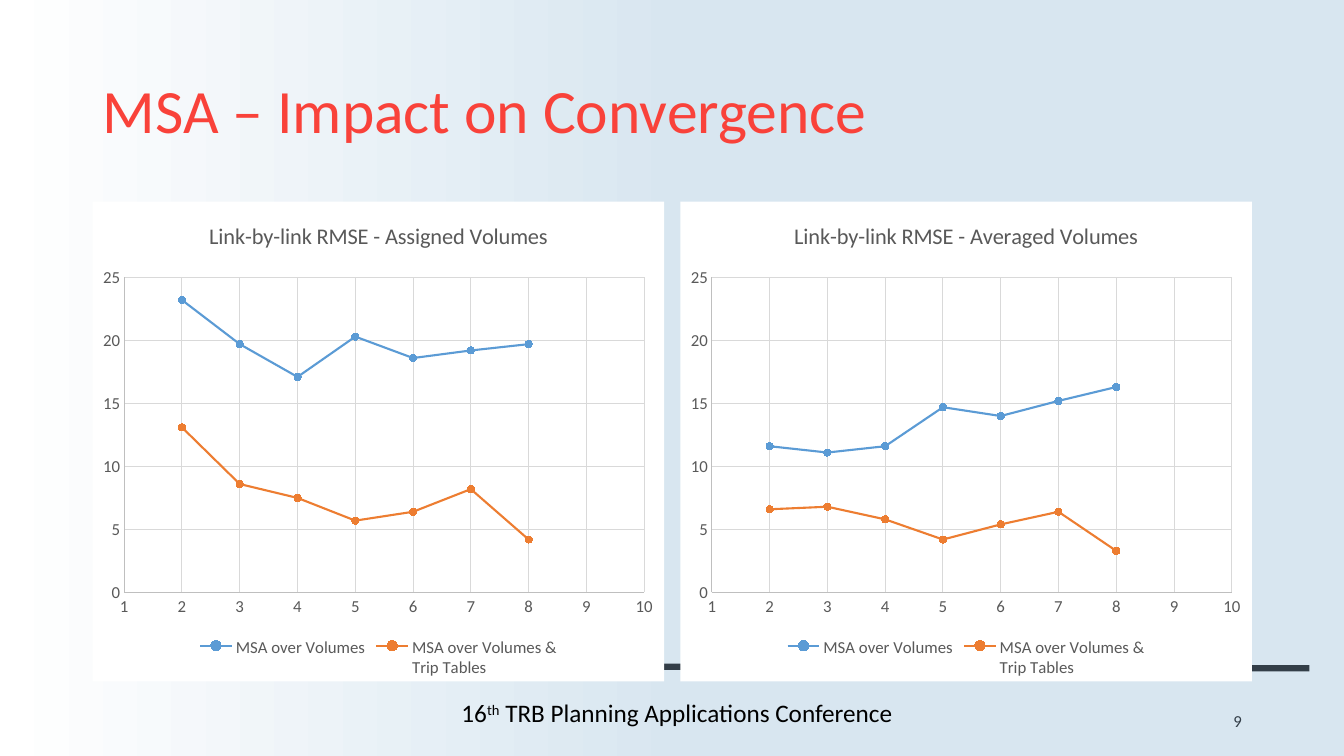
from copy import deepcopy
from dataclasses import dataclass

from lxml.etree import SubElement
from pptx import Presentation
from pptx.chart.data import XyChartData
from pptx.dml.color import RGBColor
from pptx.enum.chart import XL_CHART_TYPE, XL_LEGEND_POSITION, XL_MARKER_STYLE, XL_TICK_MARK
from pptx.enum.shapes import MSO_CONNECTOR
from pptx.enum.text import MSO_ANCHOR, MSO_AUTO_SIZE, PP_ALIGN
from pptx.oxml import parse_xml
from pptx.oxml.ns import nsdecls, qn
from pptx.util import Pt


@dataclass(frozen=True)
class Theme:
    font: str = "Calibri"
    title: str = "F9423A"
    dark: str = "333E48"
    black: str = "000000"
    white: str = "FFFFFF"
    sky: str = "D8E6F0"
    chart_text: str = "595959"
    axis: str = "BFBFBF"
    grid: str = "D9D9D9"
    series: tuple = ("5B9BD5", "ED7D31")
    title_size: int = 44
    footer_size: int = 18
    chart_title_size: int = 16
    small_size: int = 12


THEME = Theme()
ITERATIONS = range(2, 9)
SERIES_NAMES = ("MSA over Volumes", "MSA over Volumes &\nTrip Tables")
CHARTS = (
    ("Link-by-link RMSE - Assigned Volumes",
     ((23.2, 19.7, 17.1, 20.3, 18.6, 19.2, 19.7),
      (13.1, 8.6, 7.5, 5.7, 6.4, 8.2, 4.2))),
    ("Link-by-link RMSE - Averaged Volumes",
     ((11.6, 11.1, 11.6, 14.7, 14, 15.2, 16.3),
      (6.6, 6.8, 5.8, 4.2, 5.4, 6.4, 3.3))),
)
CHART_LEFT, CHART_TOP, CHART_WIDTH, CHART_HEIGHT = 66.24, 144, 408.24, 342.72
CHART_STEP = 419.76
PLOT_AREA = {"x": 0.055, "y": 0.158, "w": 0.91, "h": 0.657}


def set_values(target, values):
    for name, value in values.items():
        setattr(target, name, value)


def format_font(font, size, color):
    set_values(font, {"name": THEME.font, "size": Pt(size), "bold": False})
    font.color.rgb = RGBColor.from_string(color)


def format_line(line, color, width):
    line.color.rgb = RGBColor.from_string(color)
    line.width = Pt(width)


def set_background(slide):
    fill = slide.background.fill
    fill.gradient()
    fill.gradient_angle = 0
    last_stop = slide.element.xpath(".//a:gsLst/a:gs")[-1]
    last_stop.addnext(deepcopy(last_stop))
    stops = ((0, THEME.white), (0.51, THEME.sky), (1, THEME.sky))
    for stop, (position, color) in zip(fill.gradient_stops, stops):
        stop.position = position
        stop.color.rgb = RGBColor.from_string(color)


def add_rule(slide):
    rule = slide.shapes.add_connector(
        MSO_CONNECTOR.STRAIGHT, Pt(96.5), Pt(475.2), Pt(935.3), Pt(477.4))
    format_line(rule.line, THEME.dark, 4.5)
    SubElement(rule.element.spPr, qn("a:effectLst"))


def format_title(title, text):
    set_values(title, {"left": Pt(66.24), "top": Pt(28.8),
                       "width": Pt(828), "height": Pt(104.4)})
    frame = title.text_frame
    frame.text = text
    set_values(frame, {"vertical_anchor": MSO_ANCHOR.MIDDLE, "auto_size": MSO_AUTO_SIZE.NONE})
    paragraph = frame.paragraphs[0]
    set_values(paragraph, {"alignment": PP_ALIGN.LEFT, "line_spacing": 0.9})
    format_font(paragraph.runs[0].font, THEME.title_size, THEME.title)


def add_text(slide, box, runs, size, color, frame_values, alignment):
    """Add one paragraph of (text, baseline shift) runs."""
    shape = slide.shapes.add_textbox(*(Pt(length) for length in box))
    set_values(shape.text_frame, frame_values)
    paragraph = shape.text_frame.paragraphs[0]
    paragraph.alignment = alignment
    for text, baseline in runs:
        run = paragraph.add_run()
        run.text = text
        format_font(run.font, size, color)
        if baseline:
            run.font._rPr.set("baseline", str(baseline))


def format_axis(axis, minimum, maximum, step):
    set_values(axis, {
        "minimum_scale": minimum, "maximum_scale": maximum, "major_unit": step,
        "major_tick_mark": XL_TICK_MARK.NONE, "minor_tick_mark": XL_TICK_MARK.NONE,
        "has_major_gridlines": True,
    })
    format_font(axis.tick_labels.font, THEME.small_size, THEME.chart_text)
    format_line(axis.format.line, THEME.axis, 0.75)
    format_line(axis.major_gridlines.format.line, THEME.grid, 0.75)


def format_series(series, color):
    series.smooth = False
    format_line(series.format.line, color, 1.5)
    set_values(series.marker, {"style": XL_MARKER_STYLE.CIRCLE, "size": 5})
    marker_format = series.marker.format
    marker_format.fill.solid()
    marker_format.fill.fore_color.rgb = RGBColor.from_string(color)
    format_line(marker_format.line, color, 0.75)


def fill_chart_area(chart):
    chart.element.xpath("c:chart")[0].addnext(parse_xml(
        f'<c:spPr {nsdecls("c", "a")}><a:solidFill><a:srgbClr val="{THEME.white}"/>'
        "</a:solidFill><a:ln><a:noFill/></a:ln></c:spPr>"))


def place_plot_area(chart):
    plot_area = chart.element.xpath("c:chart/c:plotArea")[0]
    for old_layout in plot_area.xpath("c:layout"):
        plot_area.remove(old_layout)
    modes = '<c:layoutTarget val="inner"/><c:xMode val="edge"/><c:yMode val="edge"/>'
    sizes = "".join(f'<c:{name} val="{value}"/>' for name, value in PLOT_AREA.items())
    plot_area.insert(0, parse_xml(
        f'<c:layout {nsdecls("c")}><c:manualLayout>{modes}{sizes}</c:manualLayout></c:layout>'))


def add_rmse_chart(slide, left, title, value_rows):
    data = XyChartData()
    for name, values in zip(SERIES_NAMES, value_rows):
        series = data.add_series(name)
        for iteration, value in zip(ITERATIONS, values):
            series.add_data_point(iteration, value)
    chart = slide.shapes.add_chart(
        XL_CHART_TYPE.XY_SCATTER_LINES, Pt(left), Pt(CHART_TOP),
        Pt(CHART_WIDTH), Pt(CHART_HEIGHT), data).chart
    format_font(chart.font, THEME.small_size, THEME.black)
    set_values(chart, {"has_title": True, "has_legend": True})
    chart.chart_title.text_frame.text = title
    chart.chart_title.include_in_layout = False
    title_run = chart.chart_title.text_frame.paragraphs[0].runs[0]
    format_font(title_run.font, THEME.chart_title_size, THEME.chart_text)
    set_values(chart.legend, {"position": XL_LEGEND_POSITION.BOTTOM,
                              "include_in_layout": False})
    format_font(chart.legend.font, THEME.small_size, THEME.chart_text)
    format_axis(chart.category_axis, 1, 10, 1)
    format_axis(chart.value_axis, 0, 25, 5)
    chart.plots[0].vary_by_categories = False
    for series, color in zip(chart.plots[0].series, THEME.series):
        format_series(series, color)
    fill_chart_area(chart)
    place_plot_area(chart)


def main():
    presentation = Presentation()
    set_values(presentation, {"slide_width": Pt(960), "slide_height": Pt(540)})
    slide = presentation.slides.add_slide(presentation.slide_layouts.get_by_name("Title Only"))
    set_background(slide)
    add_rule(slide)
    add_text(slide, (322.56, 494.64, 332.64, 28.8),
             (("16", 0), ("th", 30000), (" TRB Planning Applications Conference", 0)),
             THEME.footer_size, THEME.black,
             {"word_wrap": False, "auto_size": MSO_AUTO_SIZE.SHAPE_TO_FIT_TEXT}, PP_ALIGN.LEFT)
    format_title(slide.shapes.title, "MSA – Impact on Convergence")
    add_text(slide, (678.24, 500.4, 216, 28.8), (("9", 0),), THEME.small_size, THEME.dark,
             {"word_wrap": True, "vertical_anchor": MSO_ANCHOR.MIDDLE}, PP_ALIGN.RIGHT)
    for index, (title, value_rows) in enumerate(CHARTS):
        add_rmse_chart(slide, CHART_LEFT + index * CHART_STEP, title, value_rows)
    presentation.save("out.pptx")


if __name__ == "__main__":
    main()
